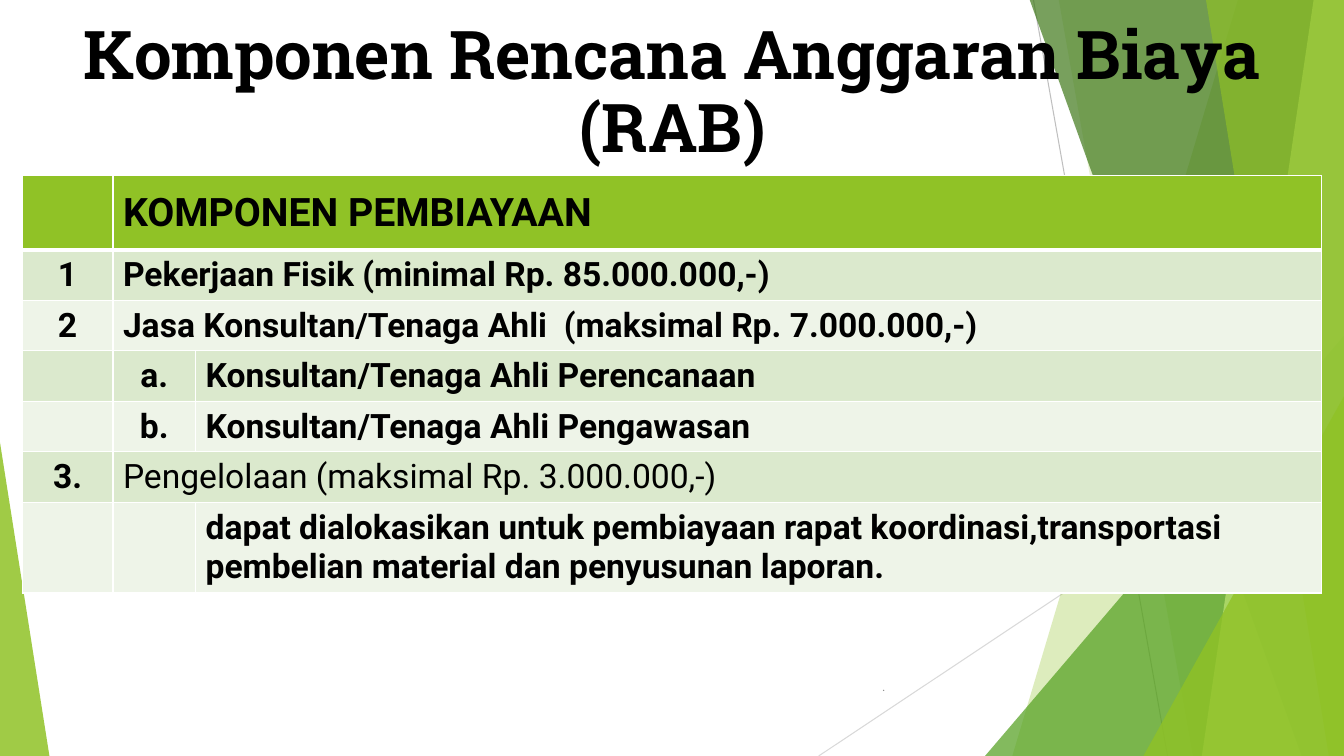
from lxml import etree
from pptx import Presentation
from pptx.dml.color import RGBColor
from pptx.enum.shapes import MSO_CONNECTOR, MSO_SHAPE
from pptx.enum.text import MSO_ANCHOR, PP_ALIGN
from pptx.oxml.ns import qn
from pptx.util import Inches, Pt

LINE = MSO_CONNECTOR.STRAIGHT
TRIANGLE = MSO_SHAPE.ISOSCELES_TRIANGLE
MIDDLE = MSO_ANCHOR.MIDDLE
LEFT, CENTER, RIGHT = PP_ALIGN.LEFT, PP_ALIGN.CENTER, PP_ALIGN.RIGHT

COLORS = {
    "lime": "90C226", "green": "54A021", "forest": "3F7819", "pale": "C0E474",
    "band": "DBE9CD", "light": "EEF4E8", "white": "FFFFFF", "black": "000000",
    "silver": "BFBFBF", "mist": "D9D9D9", "gray": "8C8C8C",
}
WIDTH, HEIGHT, TOP = 13.33, 7.5, -0.01
TITLE = "Komponen Rencana Anggaran Biaya (RAB)"
HEADING = "KOMPONEN PEMBIAYAAN"
ROWS = [
    ("", HEADING, None),
    ("1", "Pekerjaan Fisik (minimal Rp. 85.000.000,-)", None),
    ("2", "Jasa Konsultan/Tenaga Ahli  (maksimal Rp. 7.000.000,-)", None),
    ("", "a.", "Konsultan/Tenaga Ahli Perencanaan"),
    ("", "b.", "Konsultan/Tenaga Ahli Pengawasan"),
    ("3.", "Pengelolaan (maksimal Rp. 3.000.000,-)", None),
    ("", "", "dapat dialokasikan untuk pembiayaan rapat koordinasi,transportasi "
             "pembelian material dan penyusunan laporan."),
]
PLAIN_ROW = 5
COLUMN_WIDTHS = [0.9, 0.82, 11.17]
ROW_HEIGHTS = [0.74] + [0.49] * 5 + [0.88]
RAYS = [
    ((10.25, 0), (11.58, HEIGHT), "silver"),
    ((WIDTH, 4.03), (8.12, HEIGHT), "mist"),
]
# Each facet: kind, geometry, colour, opacity
FACETS = [
    ("slab", (12.28, 10.04), "lime", 30),
    ("slab", (10.5, 11.83), "lime", 20),
    ("triangle", (9.77, 3.33, 3.56, 1), "green", 72),
    ("slab", (10.21, 12.91), "forest", 70),
    ("slab", (13.03, 11.92), "pale", 70),
    ("slab", (11.96, 13.18), "lime", 65),
    ("triangle", (11.34, 3.93, 1.99, 1), "lime", 80),
    ("triangle", (0, 4.39, 0.49, 0), "lime", 85),
]


def rgb(name):
    return RGBColor.from_string(COLORS[name])


def add_ray(page, start, end, color):
    ray = page.shapes.add_connector(LINE, *map(Inches, start + end))
    ray.line.color.rgb = rgb(color)
    ray.line.width = Pt(0.75)
    properties = ray._element.find(qn("p:spPr"))
    etree.SubElement(properties, qn("a:effectLst"))


def add_facet(page, kind, geometry, color, opacity):
    if kind == "slab":
        top_x, bottom_x = geometry
        points = [(WIDTH, TOP), (WIDTH, HEIGHT), (bottom_x, HEIGHT)]
        builder = page.shapes.build_freeform(Inches(top_x), Inches(TOP))
        builder.add_line_segments([tuple(map(Inches, point)) for point in points])
        facet = builder.convert_to_shape()
    else:
        left, top, width, apex = geometry
        facet = page.shapes.add_shape(
            TRIANGLE, Inches(left), Inches(top), Inches(width), Inches(HEIGHT - top))
        facet.adjustments[0] = apex
    facet.shadow.inherit = False
    facet.line.fill.background()
    facet.fill.solid()
    facet.fill.fore_color.rgb = rgb(color)
    tone = facet._element.spPr.find(qn("a:solidFill"))[0]
    etree.SubElement(tone, qn("a:alpha"), val=str(opacity * 1000))


def write(frame, text, size, font, color, bold, align):
    para = frame.paragraphs[0]
    para.alignment = align
    span = para.add_run()
    span.text = text
    span.font.size = Pt(size)
    span.font.name = font
    span.font.bold = bold
    span.font.color.rgb = rgb(color)
    return para


def add_text(page, place, *style):
    box = page.shapes.add_textbox(*map(Inches, place))
    box.text_frame.word_wrap = True
    box.text_frame.vertical_anchor = MIDDLE
    return write(box.text_frame, *style)


def set_borders(cell, bottom_width):
    properties = cell._tc.get_or_add_tcPr()
    for index, side in enumerate(("lnL", "lnR", "lnT", "lnB")):
        width = bottom_width if side == "lnB" else 1
        border = etree.Element(qn(f"a:{side}"), w=str(Pt(width)))
        fill = etree.SubElement(border, qn("a:solidFill"))
        etree.SubElement(fill, qn("a:srgbClr"), val=COLORS["white"])
        properties.insert(index, border)


def add_budget_table(page):
    table = page.shapes.add_table(
        len(ROWS), len(COLUMN_WIDTHS), Inches(0.22), Inches(1.74),
        Inches(sum(COLUMN_WIDTHS)), Inches(sum(ROW_HEIGHTS))).table
    for column, width in zip(table.columns, COLUMN_WIDTHS):
        column.width = Inches(width)
    for row_index, texts in enumerate(ROWS):
        table.rows[row_index].height = Inches(ROW_HEIGHTS[row_index])
        header = row_index == 0
        fill = "lime" if header else "band" if row_index % 2 else "light"
        merged = texts[2] is None
        if merged:
            table.cell(row_index, 1).merge(table.cell(row_index, 2))
        for column_index, text in enumerate(texts):
            cell = table.cell(row_index, column_index)
            cell.fill.solid()
            cell.fill.fore_color.rgb = rgb(fill)
            cell.vertical_anchor = MIDDLE
            set_borders(cell, 3 if header else 1)
            if text:
                is_label = column_index == 0 or (column_index == 1 and not merged)
                bold = row_index != PLAIN_ROW or column_index == 0
                write(cell.text_frame, text, 28 if header else 24, "Roboto",
                      "black", bold, CENTER if is_label else LEFT)


def main():
    deck = Presentation()
    deck.slide_width, deck.slide_height = Inches(WIDTH), Inches(HEIGHT)
    page = deck.slides.add_slide(deck.slide_layouts[6])
    for ray in RAYS:
        add_ray(page, *ray)
    for facet in FACETS:
        add_facet(page, *facet)
    title = add_text(page, (0.05, 0.31, 13.24, 1.25),
                     TITLE, 48, "Roboto Slab", "black", True, CENTER)
    title.line_spacing = 0.9
    add_budget_table(page)
    add_text(page, (7.88, 6.61, 1, 0.4), ".", 9, "Roboto", "gray", False, RIGHT)
    deck.save("out.pptx")


if __name__ == "__main__":
    main()
